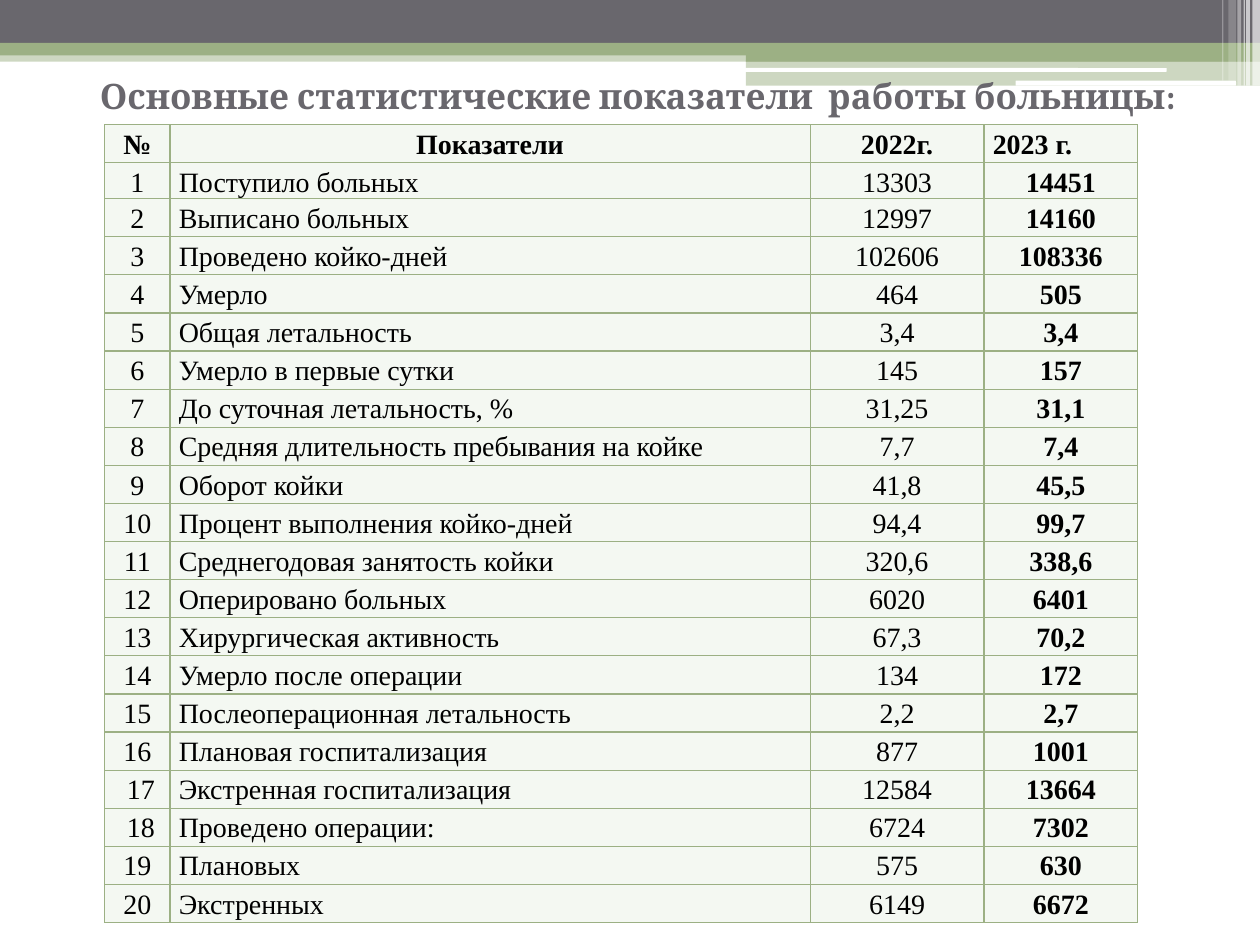
"""Build a slide with a table of hospital performance indicators."""
from lxml.etree import SubElement
from pptx import Presentation
from pptx.dml.color import RGBColor
from pptx.enum.shapes import MSO_SHAPE
from pptx.enum.text import MSO_ANCHOR, PP_ALIGN
from pptx.oxml import parse_xml
from pptx.oxml.ns import nsdecls, qn
from pptx.util import Inches, Pt

GREEN = RGBColor(0x9C, 0xB0, 0x84)
GRAY = RGBColor(0x69, 0x67, 0x6D)
WHITE = RGBColor(0xFF, 0xFF, 0xFF)
BLACK = RGBColor(0x00, 0x00, 0x00)
PALE = RGBColor(0xF4, 0xF8, 0xF2)

TITLE = "Основные статистические показатели  работы больницы:"
HEADER = ("№", "Показатели", "2022г.", "2023 г.")
INDICATORS = [
    ("1", "Поступило больных", "13303", "14451"),
    ("2", "Выписано больных", "12997", "14160"),
    ("3", "Проведено койко-дней", "102606", "108336"),
    ("4", "Умерло", "464", "505"),
    ("5", "Общая летальность", "3,4", "3,4"),
    ("6", "Умерло в первые сутки", "145", "157"),
    ("7", "До суточная летальность, %", "31,25", "31,1"),
    ("8", "Средняя длительность пребывания на койке", "7,7", "7,4"),
    ("9", "Оборот койки", "41,8", "45,5"),
    ("10", "Процент выполнения койко-дней", "94,4", "99,7"),
    ("11", "Среднегодовая занятость койки", "320,6", "338,6"),
    ("12", "Оперировано больных", "6020", "6401"),
    ("13", "Хирургическая активность", "67,3", "70,2"),
    ("14", "Умерло после операции", "134", "172"),
    ("15", "Послеоперационная летальность", "2,2", "2,7"),
    ("16", "Плановая госпитализация", "877", "1001"),
    (" 17", "Экстренная госпитализация", "12584", "13664"),
    (" 18", "Проведено операции:", "6724", "7302"),
    ("19", "Плановых", "575", "630"),
    ("20", "Экстренных", "6149", "6672"),
]
CENTER, LEFT, JUSTIFY = PP_ALIGN.CENTER, PP_ALIGN.LEFT, PP_ALIGN.JUSTIFY
HEADER_ALIGN = (CENTER, CENTER, CENTER, JUSTIFY)
BODY_ALIGN = (CENTER, LEFT, CENTER, CENTER)
COLUMNS = (0.52, 5.08, 1.38, 1.22)
TABLE_BOX = (0.83, 0.99, 8.19, 6.33)
FIRST_ROW = 0.28

RECT, ROUND = MSO_SHAPE.RECTANGLE, MSO_SHAPE.ROUNDED_RECTANGLE
BANDS = [
    (RECT, (0, 0.4, 10, 0.09), GREEN, 50),
    (RECT, (0, 0, 10, 0.34), GRAY, 100),
    (RECT, (0, 0.34, 10, 0.1), GREEN, 100),
    (RECT, (5.92, 0.39, 4.08, 0.1), GREEN, 100),
    (RECT, (5.92, 0.48, 4.08, 0.2), GREEN, 50),
    (ROUND, (5.91, 0.54, 3.35, 0.03), WHITE, 100),
    (ROUND, (8.06, 0.64, 1.75, 0.04), WHITE, 100),
]
STRIPES = [
    (9.94, 0.06, 0.68, 65),
    (9.89, 0.03, 0.68, 65),
    (9.87, 0.01, 0.68, 60),
    (9.82, 0.03, 0.68, 40),
    (9.75, 0.06, 0.64, 20),
    (9.7, 0.01, 0.64, 30),
]


def add_bar(s, kind, box, color, opacity):
    sp = s.shapes.add_shape(kind, *map(Inches, box))
    sp.shadow.inherit = False
    sp.line.fill.background()
    sp.fill.solid()
    sp.fill.fore_color.rgb = color
    if opacity < 100:
        rgb = sp.fill._xPr.find(f".//{qn('a:srgbClr')}")
        SubElement(rgb, qn("a:alpha"), val=str(opacity * 1000))


def fill_cell(cell, text, align, bold):
    cell.margin_left = cell.margin_right = Inches(0.07)
    cell.margin_top = cell.margin_bottom = 0
    cell.text = text
    p = cell.text_frame.paragraphs[0]
    p.alignment, p.line_spacing = align, 1.15
    p.font.name, p.font.size, p.font.bold = "Times New Roman", Pt(16), bold
    p.font.color.rgb = BLACK
    tc_pr = cell._tc.get_or_add_tcPr()
    for side in ("lnL", "lnR", "lnT", "lnB"):
        tc_pr.append(parse_xml(
            f'<a:{side} {nsdecls("a")} w="{Pt(0.75)}"><a:solidFill>'
            f'<a:srgbClr val="{GREEN}"/></a:solidFill></a:{side}>'))
    cell.fill.solid()
    cell.fill.fore_color.rgb = PALE


def add_title(s):
    sp = s.shapes.title
    sp.left, sp.top, sp.width, sp.height = map(Inches, (0.12, 0.52, 9.88, 0.47))
    tf = sp.text_frame
    tf.text = TITLE
    tf.word_wrap = True
    tf.vertical_anchor = MSO_ANCHOR.MIDDLE
    p = tf.paragraphs[0]
    p.alignment = CENTER
    p.font.name, p.font.size, p.font.bold = "Cambria", Pt(20), True
    p.font.color.rgb = GRAY
    s.shapes._spTree.append(sp._element)


def add_indicators(s):
    rows = [HEADER, *INDICATORS]
    table = s.shapes.add_table(len(rows), len(HEADER), *map(Inches, TABLE_BOX)).table
    table.horz_banding = False
    for column, width in zip(table.columns, COLUMNS):
        column.width = Inches(width)
    row_height = (TABLE_BOX[3] - FIRST_ROW) / len(INDICATORS)
    for i, row in enumerate(rows):
        table.rows[i].height = Inches(FIRST_ROW if i == 1 else row_height)
        aligns = BODY_ALIGN if i else HEADER_ALIGN
        for j, (text, align) in enumerate(zip(row, aligns)):
            fill_cell(table.cell(i, j), text, align, i == 0 or j == len(row) - 1)


def main():
    prs = Presentation()
    prs.slide_width, prs.slide_height = Inches(10), Inches(7.5)
    s = prs.slides.add_slide(prs.slide_layouts[5])
    for band in BANDS:
        add_bar(s, *band)
    for left, width, height, opacity in STRIPES:
        add_bar(s, RECT, (left, 0, width, height), WHITE, opacity)
    add_title(s)
    add_indicators(s)
    prs.save("out.pptx")


if __name__ == "__main__":
    main()
